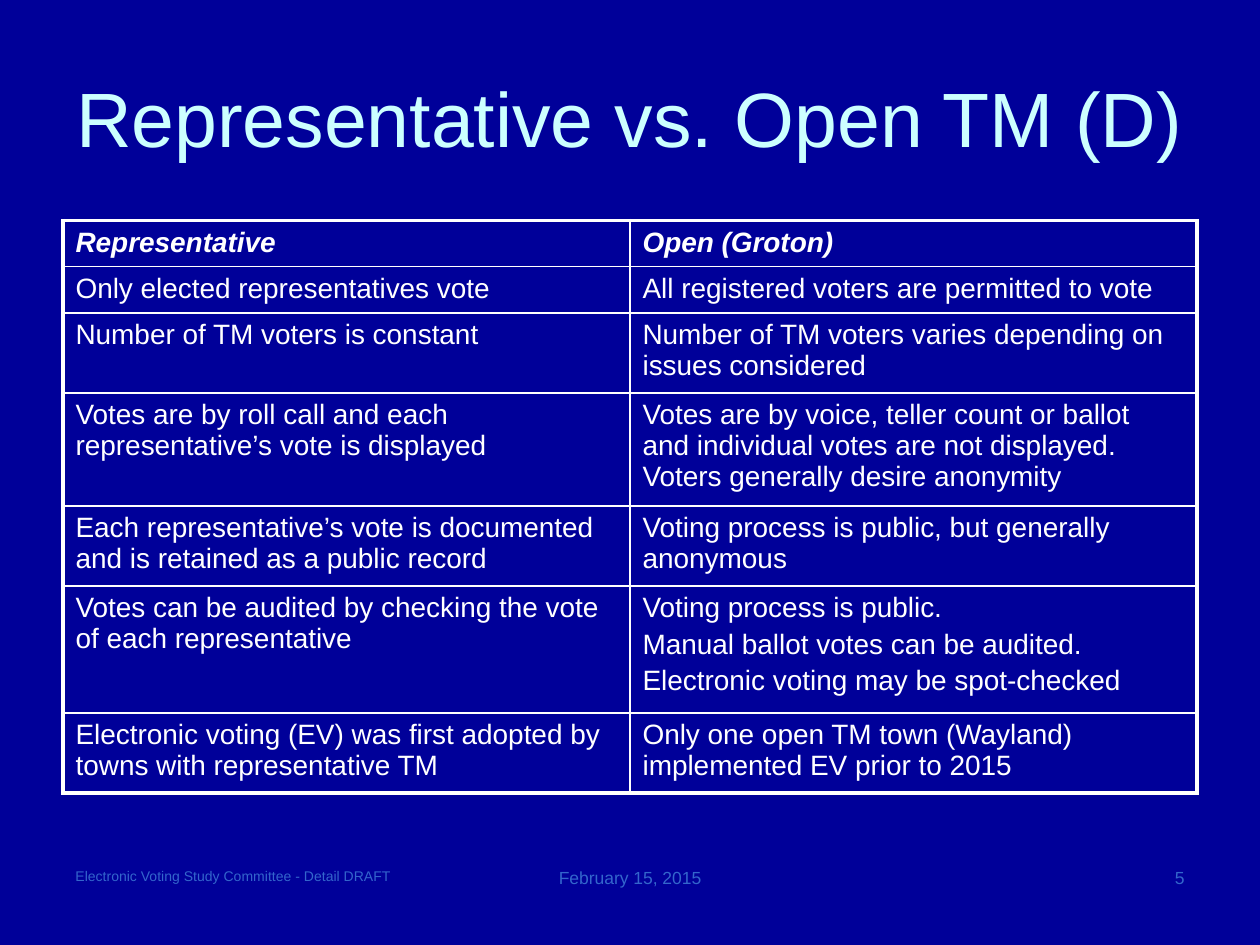
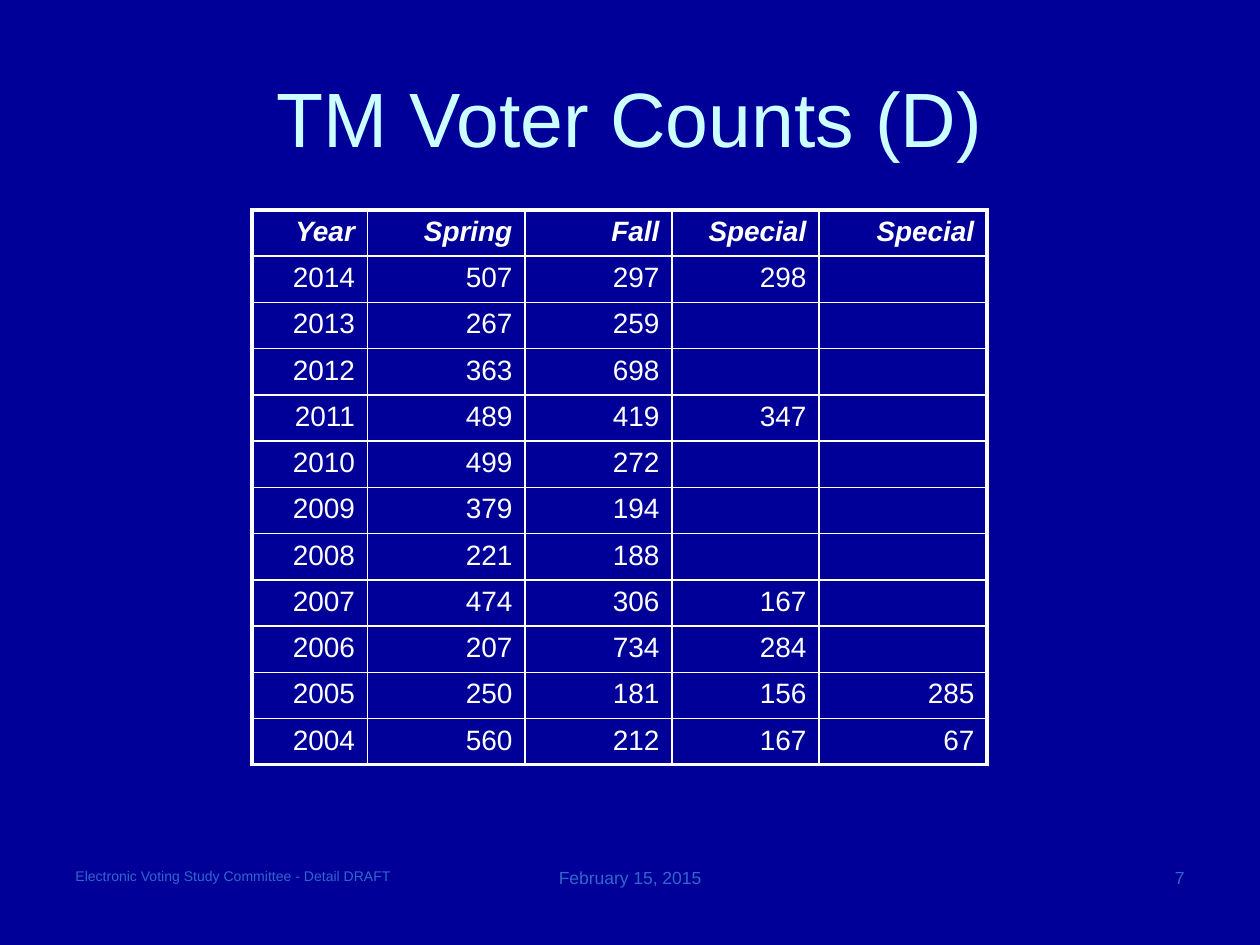
"""Builds two town meeting (TM) slides, each with a ruled table."""
from typing import NamedTuple, Sequence

from lxml import etree
from pptx import Presentation
from pptx.dml.color import RGBColor
from pptx.enum.text import MSO_ANCHOR, PP_ALIGN
from pptx.oxml.ns import qn
from pptx.util import Pt

NAVY = RGBColor(0x00, 0x00, 0x99)
ICE = RGBColor(0xCC, 0xFF, 0xFF)
BLUE = RGBColor(0x33, 0x66, 0xCC)
WHITE = RGBColor(0xFF, 0xFF, 0xFF)
LEFT, CENTER, RIGHT = PP_ALIGN.LEFT, PP_ALIGN.CENTER, PP_ALIGN.RIGHT
TOP, MIDDLE = MSO_ANCHOR.TOP, MSO_ANCHOR.MIDDLE

FONT = "Arial"
CELL_SIZE = 16
PARAGRAPH_GAP = 3.2
OUTER_LINE, INNER_LINE = 2.25, 1
ROW_HEIGHT = 25


class Box(NamedTuple):
    """A rectangle in points."""
    left: float
    top: float
    width: float
    height: float


class Footer(NamedTuple):
    """One text of the footer line."""
    text: str
    left: float
    width: float
    size: float
    align: PP_ALIGN


class TableSpec(NamedTuple):
    """A table with its frame, grid and rows of text."""
    box: Box
    cols: Sequence[float]
    heights: Sequence[float]
    rows: Sequence[Sequence[str]]
    align: PP_ALIGN


class SlideSpec(NamedTuple):
    """What sets one slide apart."""
    title: str
    title_box: Box
    number: str
    table: TableSpec


COMPARISON = [
    ("Representative", "Open (Groton)"),
    ("Only elected representatives vote", "All registered voters are permitted to vote"),
    ("Number of TM voters is constant",
     "Number of TM voters varies depending on issues considered"),
    ("Votes are by roll call and each representative’s vote is displayed",
     "Votes are by voice, teller count or ballot and individual votes are not displayed. "
     "Voters generally desire anonymity"),
    ("Each representative’s vote is documented and is retained as a public record",
     "Voting process is public, but generally anonymous"),
    ("Votes can be audited by checking the vote of each representative",
     "Voting process is public.\nManual ballot votes can be audited.\n"
     "Electronic voting may be spot-checked"),
    ("Electronic voting (EV) was first adopted by towns with representative TM",
     "Only one open TM town (Wayland) implemented EV prior to 2015"),
]

VOTER_COUNTS = [
    ("Year", "Spring", "Fall", "Special", "Special"),
    ("2014", "507", "297", "298", ""),
    ("2013", "267", "259", "", ""),
    ("2012", "363", "698", "", ""),
    ("2011", "489", "419", "347", ""),
    ("2010", "499", "272", "", ""),
    ("2009", "379", "194", "", ""),
    ("2008", "221", "188", "", ""),
    ("2007", "474", "306", "167", ""),
    ("2006", "207", "734", "284", ""),
    ("2005", "250", "181", "156", "285"),
    ("2004", "560", "212", "167", "67"),
]

SLIDES = [
    SlideSpec("Representative vs. Open TM (D)", Box(30, 21.6, 660, 90), "5",
              TableSpec(Box(36, 126, 648, 327), (324, 324),
                        (ROW_HEIGHT, ROW_HEIGHT, 45.5, 60.5, 45.5, 72.7, 43),
                        COMPARISON, LEFT)),
    SlideSpec("TM Voter Counts (D)", Box(36, 21.6, 648, 90), "7",
              TableSpec(Box(144, 120, 420, 317), (66, 90, 84, 84, 96),
                        [ROW_HEIGHT] * len(VOTER_COUNTS), VOTER_COUNTS, RIGHT)),
]


def write(tf, text: str, *, size: float, color: RGBColor, align: PP_ALIGN = LEFT,
          bold: bool = False, italic: bool = False) -> None:
    """Fill a text frame, one paragraph per line of text."""
    for i, line in enumerate(text.split("\n")):
        p = tf.add_paragraph() if i else tf.paragraphs[0]
        p.alignment = align
        p.space_before = Pt(PARAGRAPH_GAP if i else 0)
        if not line:
            etree.SubElement(p._p, qn("a:endParaRPr"), sz=str(size * 100))
            continue
        r = p.add_run()
        r.text = line
        r.font.name, r.font.size = FONT, Pt(size)
        r.font.bold, r.font.italic = bold, italic
        r.font.color.rgb = color


def add_text(s, box: Box, text: str, *, anchor: MSO_ANCHOR = TOP, **style) -> None:
    """Add a wrapped text box."""
    tf = s.shapes.add_textbox(*map(Pt, box)).text_frame
    tf.word_wrap = True
    tf.vertical_anchor = anchor
    write(tf, text, **style)


def set_border(cell, side: str, outer: bool) -> None:
    """Draw one side of a cell, heavier on the table's edge."""
    width = Pt(OUTER_LINE if outer else INNER_LINE)
    ln = etree.SubElement(cell._tc.get_or_add_tcPr(), qn(f"a:ln{side}"), w=str(width))
    fill = etree.SubElement(ln, qn("a:solidFill"))
    etree.SubElement(fill, qn("a:srgbClr"), val=str(WHITE))


def add_ruled_table(s, spec: TableSpec) -> None:
    """Add an unfilled table with white rules and a bold italic header."""
    last_row, last_col = len(spec.rows) - 1, len(spec.cols) - 1
    table = s.shapes.add_table(last_row + 1, last_col + 1, *map(Pt, spec.box)).table
    table.first_row = table.horz_banding = False
    for col, width in zip(table.columns, spec.cols):
        col.width = Pt(width)
    for i, (height, texts) in enumerate(zip(spec.heights, spec.rows)):
        table.rows[i].height = Pt(height)
        for j, text in enumerate(texts):
            cell = table.cell(i, j)
            write(cell.text_frame, text, size=CELL_SIZE, color=WHITE, align=spec.align,
                  bold=i == 0, italic=i == 0)
            edges = {"L": j == 0, "R": j == last_col, "T": i == 0, "B": i == last_row}
            for side, outer in edges.items():
                set_border(cell, side, outer)
            cell.fill.background()


def add_slide(prs, spec: SlideSpec) -> None:
    """Add a slide with background, footers, title and table."""
    s = prs.slides.add_slide(prs.slide_layouts[6])
    s.background.fill.solid()
    s.background.fill.fore_color.rgb = NAVY
    footers = [
        Footer("Electronic Voting Study Committee - Detail DRAFT", 36, 234, 8, LEFT),
        Footer("February 15, 2015", 282, 156, 10, CENTER),
        Footer(spec.number, 450, 234, 10, RIGHT),
    ]
    for f in footers:
        add_text(s, Box(f.left, 492, f.width, 37.5), f.text,
                 size=f.size, color=BLUE, align=f.align)
    add_text(s, spec.title_box, spec.title, anchor=MIDDLE, size=44, color=ICE, align=CENTER)
    add_ruled_table(s, spec.table)


def main() -> None:
    """Build and save the presentation."""
    prs = Presentation()
    prs.slide_width, prs.slide_height = Pt(720), Pt(540)
    for spec in SLIDES:
        add_slide(prs, spec)
    prs.save("out.pptx")


if __name__ == "__main__":
    main()
